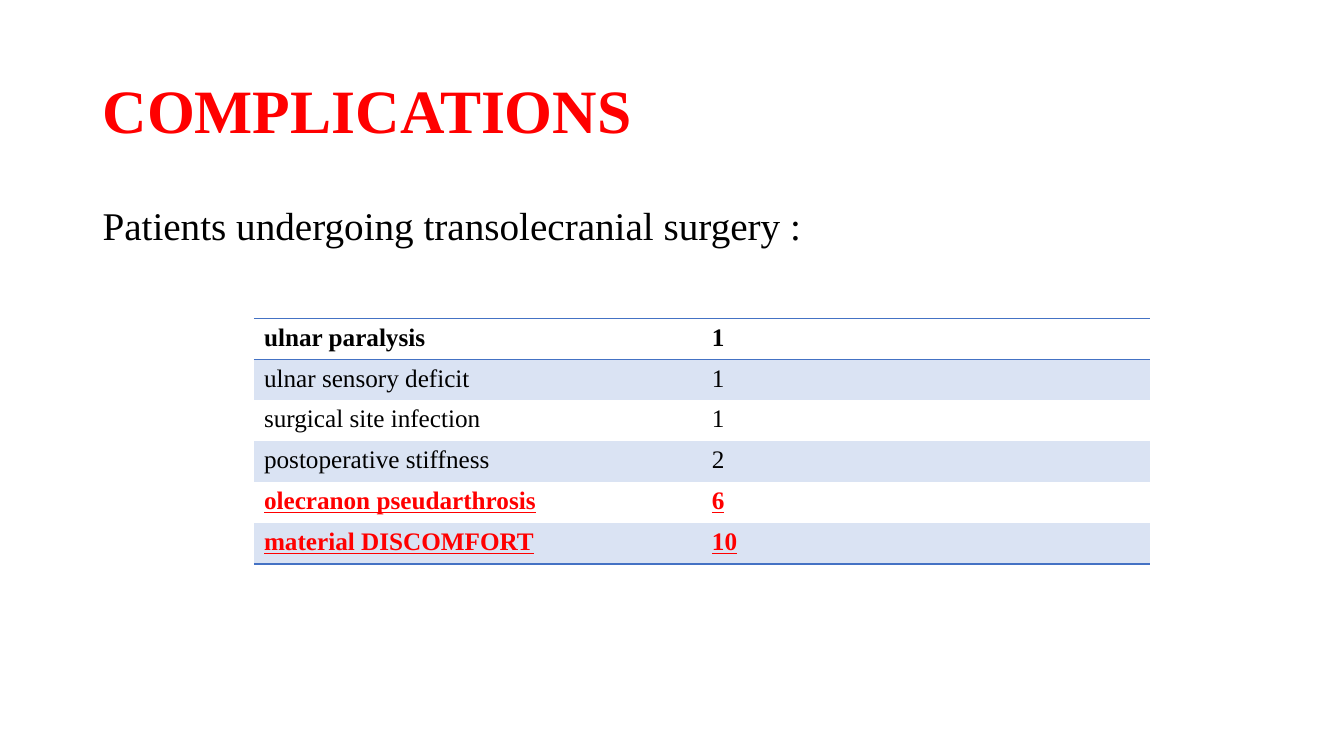
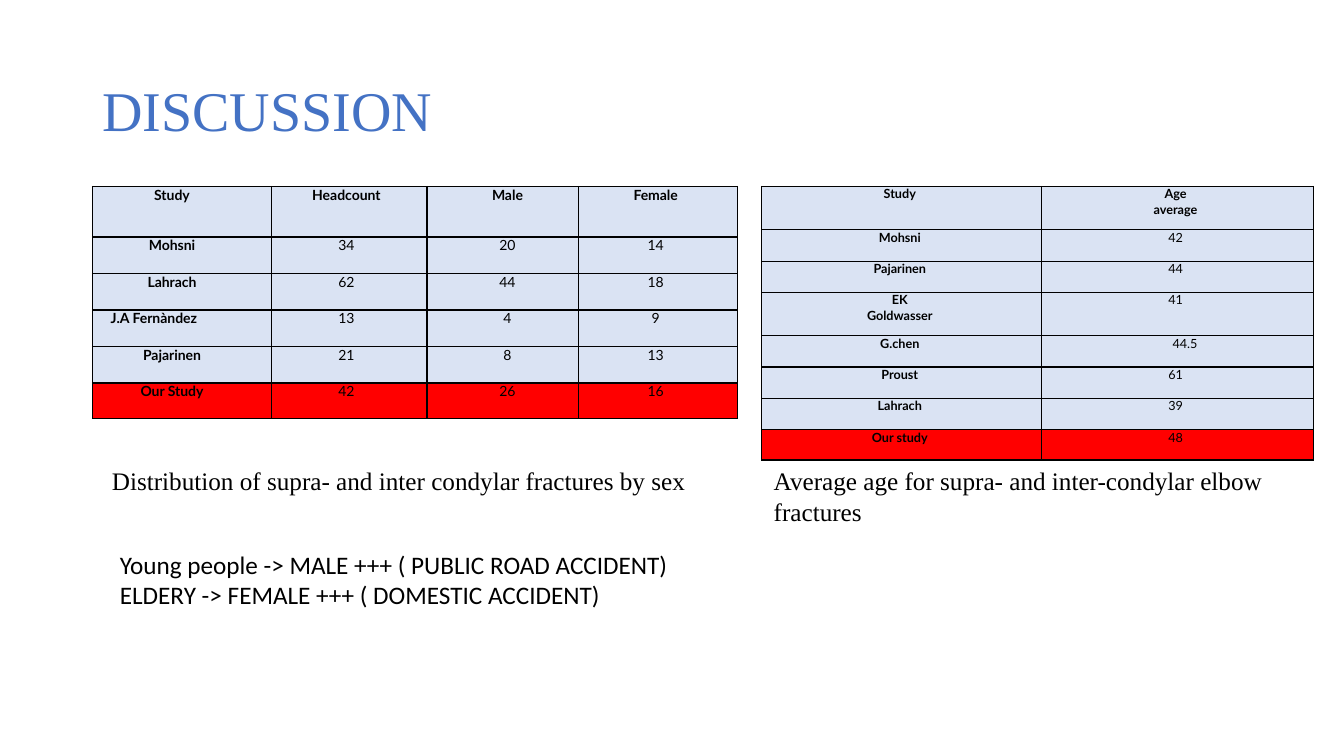
from dataclasses import dataclass

from lxml.etree import SubElement
from pptx import Presentation
from pptx.dml.color import RGBColor
from pptx.enum.text import MSO_ANCHOR, MSO_AUTO_SIZE, PP_ALIGN
from pptx.oxml.ns import qn
from pptx.util import Cm, Pt

PLAIN_TABLE = "{2D5ABB26-0587-4C30-8999-92F81FD0307C}"


@dataclass(frozen=True)
class Theme:
    red: str = "FF0000"
    blue: str = "4472C4"
    pale: str = "DAE3F3"
    black: str = "000000"
    serif: str = "Times New Roman"
    sans: str = "Calibri"
    table_font: str = "Lato"
    title: int = 44
    title_small: int = 40
    body: int = 28
    text: int = 18
    table: int = 10
    table_small: int = 9


THEME = Theme()


def write(p, text, *, size=THEME.text, font=THEME.serif, color=THEME.black,
          bold=False, underline=False, align=PP_ALIGN.LEFT, indent=(0, 0),
          before=0, spacing=1.0):
    """Fill a paragraph; indent is (left, right) in cm, before is in points."""
    p.alignment, p.space_before, p.line_spacing = align, Pt(before), spacing
    pPr = p._p.get_or_add_pPr()
    for name, length in zip(("marL", "marR"), indent):
        pPr.set(name, str(int(Cm(length))))
    pPr.set("indent", "0")
    r = p.add_run()
    r.text = text
    f = r.font
    f.name, f.size, f.bold, f.underline = font, Pt(size), bold, underline
    f.color.rgb = RGBColor.from_string(color)


def draw_borders(cell, sides, color):
    tcPr = cell._tc.get_or_add_tcPr()
    for side in sides:
        ln = SubElement(tcPr, qn(f"a:ln{side}"), w=str(int(Pt(1))))
        fill = SubElement(ln, qn("a:solidFill"))
        SubElement(fill, qn("a:srgbClr"), val=color)


def fill_cell(cell, color):
    if color:
        cell.fill.solid()
        cell.fill.fore_color.rgb = RGBColor.from_string(color)
    else:
        cell.fill.background()


class Deck:
    def __init__(self, theme):
        self.theme = theme
        self.prs = Presentation()
        self.prs.slide_width, self.prs.slide_height = Cm(33.87), Cm(19.05)
        self.s = None

    def place(self, sp, left, top, width, height):
        sp.left, sp.top, sp.width, sp.height = map(Cm, (left, top, width, height))
        tf = sp.text_frame
        tf.word_wrap, tf.auto_size = True, MSO_AUTO_SIZE.NONE
        return tf

    def add_slide(self, layout, title, **style):
        self.s = self.prs.slides.add_slide(self.prs.slide_layouts[layout])
        tf = self.place(self.s.shapes.title, 2.33, 1.02, 29.21, 3.68)
        tf.vertical_anchor = MSO_ANCHOR.MIDDLE
        write(tf.paragraphs[0], title, spacing=0.9, **style)

    def add_body(self, text):
        tf = self.place(self.s.placeholders[1], 2.33, 5.08, 29.21, 12.09)
        p = tf.paragraphs[0]
        write(p, text, size=self.theme.body, before=10, spacing=0.9)
        SubElement(p._p.get_or_add_pPr(), qn("a:buNone"))

    def add_text(self, lines, left, top, width, height, **style):
        sp = self.s.shapes.add_textbox(0, 0, 0, 0)
        tf = self.place(sp, left, top, width, height)
        for i, line in enumerate(lines):
            write(tf.add_paragraph() if i else tf.paragraphs[0], line, **style)

    def add_table(self, left, top, widths, heights):
        """Add an unstyled table with column and row sizes in cm."""
        frame = self.s.shapes.add_table(
            len(heights), len(widths), Cm(left), Cm(top),
            Cm(sum(widths)), Cm(sum(heights)))
        table = frame.table
        table.first_row = table.horz_banding = False
        table._tbl.tblPr.find(qn("a:tableStyleId")).text = PLAIN_TABLE
        for column, width in zip(table.columns, widths):
            column.width = Cm(width)
        for row, height in zip(table.rows, heights):
            row.height = Cm(height)
        return table

    def add_banded_table(self, rows, highlighted, left, top, widths, row_height):
        """Bold first row, alternate bands, and the last rows highlighted."""
        t = self.theme
        last = len(rows) - 1
        table = self.add_table(left, top, widths, [row_height] * len(rows))
        for i, row in enumerate(rows):
            marked = i > last - highlighted
            sides = {0: "TB", last: "B"}.get(i, "")
            for j, text in enumerate(row):
                cell = table.cell(i, j)
                draw_borders(cell, sides, t.blue)
                fill_cell(cell, t.pale if i % 2 else None)
                write(cell.text_frame.paragraphs[0], text,
                      color=t.red if marked else t.black,
                      bold=marked or i == 0, underline=marked)

    def add_study_table(self, rows, left, widths, heights, indents, size,
                        left_aligned):
        """Gridded table with a red last row; left_aligned maps text to indent."""
        t = self.theme
        table = self.add_table(left, 4.7, widths, heights)
        for i, row in enumerate(rows):
            for j, text in enumerate(row):
                cell = table.cell(i, j)
                cell.margin_left = cell.margin_right = 0
                cell.margin_top = cell.margin_bottom = 0
                draw_borders(cell, "LRTB", t.black)
                fill_cell(cell, t.red if i == len(rows) - 1 else t.pale)
                align, indent = PP_ALIGN.CENTER, indents[j]
                if text in left_aligned:
                    align, indent = PP_ALIGN.LEFT, (left_aligned[text], 0)
                write(cell.text_frame.paragraphs[0], text, size=size,
                      font=t.table_font, bold=i == 0 or j == 0,
                      align=align, indent=indent, before=4)


def add_complications(deck):
    t = deck.theme
    deck.add_slide(1, "COMPLICATIONS", size=t.title, color=t.red, bold=True)
    deck.add_body("Patients undergoing transolecranial surgery :")
    rows = [
        ("ulnar paralysis", "1"),
        ("ulnar sensory deficit", "1"),
        ("surgical site infection", "1"),
        ("postoperative stiffness", "2"),
        ("olecranon pseudarthrosis", "6"),
        ("material DISCOMFORT", "10"),
    ]
    deck.add_banded_table(rows, 2, 6.4, 8.03, [11.29] * 2, 1.03)


def add_discussion(deck):
    t = deck.theme
    deck.add_slide(5, "DISCUSSION", size=t.title_small, color=t.blue)
    by_sex = [
        ("Study", "Headcount", "Male", "Female"),
        ("Mohsni", "34", "20", "14"),
        ("Lahrach", "62", "44", "18"),
        ("J.A Fernàndez", "13", "4", "9"),
        ("Pajarinen", "21", "8", "13"),
        ("Our Study", "42", "26", "16"),
    ]
    deck.add_study_table(
        by_sex, 2.33, [4.52, 3.91, 3.81, 4.01], [1.27] + [0.92] * 4 + [0.89],
        [(0.71, 1.22), (0.89, 1.04), (1.04, 0.79), (0.79, 0.89)],
        t.table, {"J.A Fernàndez": 0.46})
    deck.add_text(["Distribution of supra- and inter condylar fractures by sex"],
                  2.57, 11.61, 16.92, 1.02)
    by_age = [
        ("Study", "Age average"),
        ("Mohsni", "42"),
        ("Pajarinen", "44"),
        ("EK Goldwasser", "41"),
        ("G.chen", "44.5"),
        ("Proust", "61"),
        ("Lahrach", "39"),
        ("Our study", "48"),
    ]
    deck.add_study_table(
        by_age, 19.2, [7.05, 6.85], [1.09, 0.79, 0.79] + [1.09] + [0.79] * 3 + [0.76],
        [(2.49, 2.59), (2.59, 2.69)], t.table_small, {"44.5": 3.3})
    deck.add_text(["Average age for supra- and inter-condylar elbow fractures"],
                  19.25, 11.61, 13.87, 1.8)
    deck.add_text(["Young people -> MALE +++ ( PUBLIC ROAD ACCIDENT)",
                   "ELDERY -> FEMALE +++ ( DOMESTIC ACCIDENT)"],
                  2.77, 13.72, 21.72, 1.8, font=t.sans)


def main():
    deck = Deck(THEME)
    add_complications(deck)
    add_discussion(deck)
    deck.prs.save("out.pptx")


if __name__ == "__main__":
    main()
